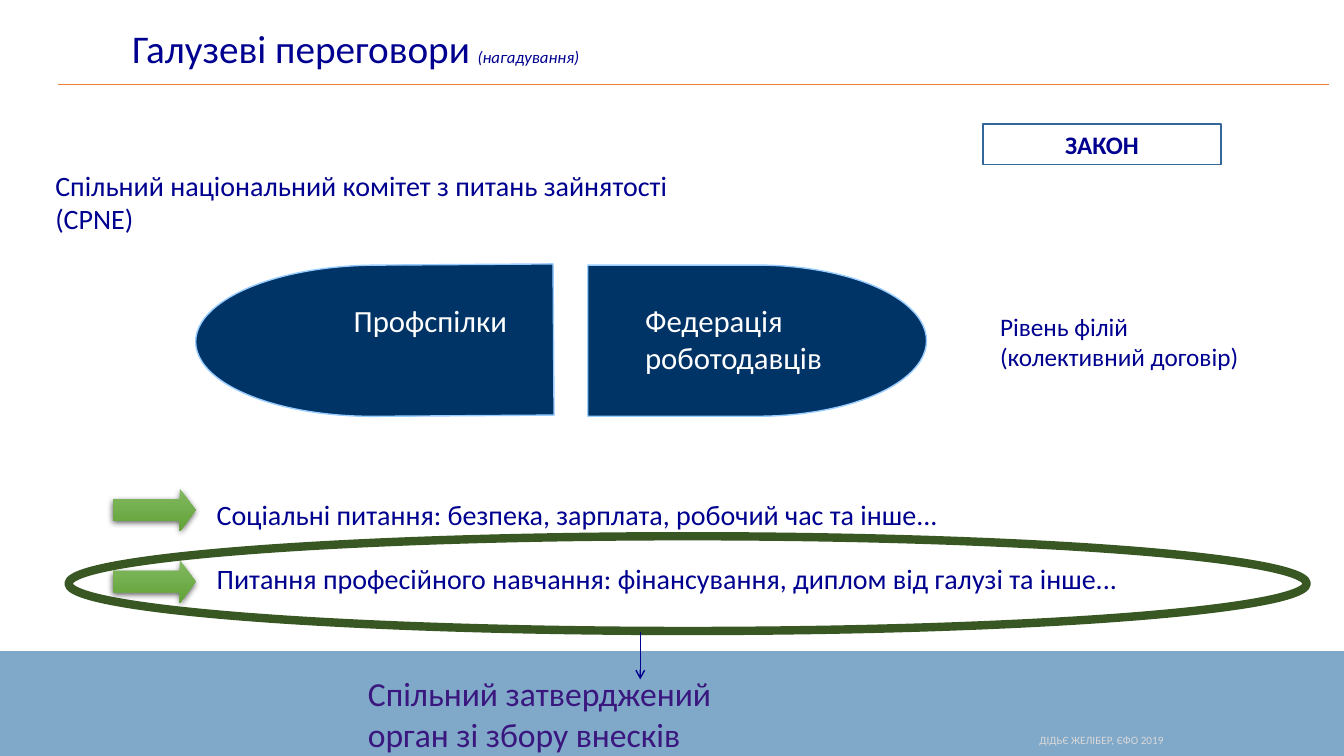
from dataclasses import dataclass
from lxml import etree
from pptx import Presentation
from pptx.dml.color import RGBColor
from pptx.enum.shapes import MSO_CONNECTOR, MSO_SHAPE
from pptx.enum.text import MSO_ANCHOR, PP_ALIGN
from pptx.oxml.ns import qn
from pptx.util import Inches, Pt

RECT, OVAL = MSO_SHAPE.RECTANGLE, MSO_SHAPE.OVAL
ARROW, DELAY = MSO_SHAPE.RIGHT_ARROW, MSO_SHAPE.FLOWCHART_DELAY
LINE = MSO_CONNECTOR.STRAIGHT
TOP, MID = MSO_ANCHOR.TOP, MSO_ANCHOR.MIDDLE
LEFT, CENTER = PP_ALIGN.LEFT, PP_ALIGN.CENTER


@dataclass(frozen=True)
class Theme:
    font: str = "Calibri"
    ink: str = "000090"
    violet: str = "3A177F"
    white: str = "FFFFFF"
    pale: str = "D9D9D9"
    band: str = "80A8C8"
    navy: str = "003366"
    sky: str = "99CCFF"
    steel: str = "336699"
    olive: str = "385723"
    orange: str = "ED7D31"
    leaf: tuple = ("81B861", "62A336")
    title: int = 28
    gap: int = 24
    head: int = 24
    party: int = 22
    body: int = 20
    label: int = 18
    note: int = 12
    foot: int = 8


THEME = Theme()


def rgb(code):
    return RGBColor.from_string(code)


def apply(item, form):
    for key, value in form.items():
        setattr(item, key, value)


def style(run, size, color, **form):
    apply(run.font, {"name": THEME.font, "size": Pt(size), **form})
    run.font.color.rgb = rgb(color)


def frame(shape, **form):
    apply(shape.text_frame, {"word_wrap": True, "vertical_anchor": TOP, **form})
    return shape.text_frame.paragraphs[0]


def write(shape, text, size, color, align=LEFT, wrap=True, anchor=TOP, **form):
    para = frame(shape, word_wrap=wrap, vertical_anchor=anchor)
    para.text = text
    para.alignment = align
    for run in para.runs:
        style(run, size, color, **form)


def label(slide, box, text, size, color, **form):
    shape = slide.shapes.add_textbox(*map(Inches, box))
    write(shape, text, size, color, **form)


def block(slide, kind, box, fill=None, line=None, width=1):
    shape = slide.shapes.add_shape(kind, *map(Inches, box))
    shape.shadow.inherit = False
    if fill:
        shape.fill.solid()
        shape.fill.fore_color.rgb = rgb(fill)
    else:
        shape.fill.background()
    if line:
        shape.line.color.rgb = rgb(line)
        shape.line.width = Pt(width)
    else:
        shape.line.fill.background()
    return shape


def rule(slide, start, end, color, width, head=False):
    line = slide.shapes.add_connector(LINE, *map(Inches, start + end))
    line.line.color.rgb = rgb(color)
    line.line.width = Pt(width)
    props = line._element.spPr
    if head:
        etree.SubElement(props.find(qn("a:ln")), qn("a:tailEnd"), type="arrow")
    etree.SubElement(props, qn("a:effectLst"))


def heading(slide, box):
    x, y, w, h = box
    title = slide.shapes.title
    apply(title, dict(zip(("left", "top", "width", "height"), map(Inches, box))))
    para = frame(title, margin_top=0)
    para.alignment = LEFT
    for text, size, slant in (
        ("Галузеві переговори", THEME.title, False),
        (" ", THEME.gap, False),
        ("(нагадування)", THEME.note, True),
    ):
        run = para.add_run()
        run.text = text
        style(run, size, THEME.ink, italic=slant)
    rule(slide, (x - 0.63, y + 0.6), (x + 11.97, y + 0.6), THEME.orange, 0.5)


def law(slide, box):
    shape = block(slide, RECT, box, THEME.white, THEME.steel)
    write(shape, "ЗАКОН", THEME.label, THEME.ink, align=CENTER, bold=True)


def parties(slide, box):
    x, y, w, h = box
    unions = block(slide, DELAY, (x, y, 3.55, h), THEME.navy, THEME.sky)
    unions.rotation = 179.6
    block(slide, DELAY, (x + w - 3.36, y, 3.36, h), THEME.navy, THEME.sky)
    for shift, width, text in (
        (1.47, 1.86, "Профспілки"),
        (4.36, 2.4, "Федерація\nроботодавців"),
    ):
        place = (x + shift, y + 0.31, width, 0.84)
        label(slide, place, text, THEME.party, THEME.white)


def pointer(slide, box):
    arrow = block(slide, ARROW, box)
    arrow.adjustments[0], arrow.adjustments[1] = 0.5, 0.37
    arrow.fill.gradient()
    arrow.fill.gradient_angle = 270
    for stop, color in zip(arrow.fill.gradient_stops, THEME.leaf):
        stop.color.rgb = rgb(color)
    effects = arrow._element.spPr.find(qn("a:effectLst"))
    shade = etree.SubElement(
        effects, qn("a:outerShdw"), blurRad=str(Pt(4.5)), dist=str(Pt(1.5)),
        dir="5400000", rotWithShape="0",
    )
    color = etree.SubElement(shade, qn("a:srgbClr"), val="000000")
    etree.SubElement(color, qn("a:alpha"), val="63000")


def topics(slide, box):
    x, y, w, h = box
    for row, (drop, text) in enumerate((
        (0.04, "Соціальні питання: безпека, зарплата, робочий час та інше..."),
        (0.67, "Питання професійного навчання: фінансування, диплом від галузі та інше..."),
    )):
        pointer(slide, (x, y + row * 0.71, 0.82, 0.42))
        place = (x + 0.93, y + drop, w - 0.93, 0.44)
        label(slide, place, text, THEME.body, THEME.ink)
    ring = (x - 0.44, y + 0.47, 12.28, h - 0.47)
    block(slide, OVAL, ring, line=THEME.olive, width=6)


def footer(slide, box):
    x, y, w, h = box
    block(slide, RECT, box, THEME.band)
    label(slide, (x + 3.55, y + 0.17, 4.38, 0.87),
          "Спільний затверджений орган зі збору внесків", THEME.head, THEME.violet)
    rule(slide, (x + 6.35, y - 0.19), (x + 6.35, y + 0.28), THEME.ink, 1, True)
    label(slide, (x + 10.21, y + 0.76, 1.48, 0.24), "ДІДЬЄ ЖЕЛІБЕР, ЄФО 2019",
          THEME.foot, THEME.pale, wrap=False, anchor=MID)


def main():
    deck = Presentation()
    deck.slide_width, deck.slide_height = Inches(13.33), Inches(7.5)
    slide = deck.slides.add_slide(deck.slide_layouts[5])
    heading(slide, (1.21, 0.24, 12.05, 0.7))
    law(slide, (9.75, 1.23, 2.36, 0.4))
    label(slide, (0.45, 1.62, 7.07, 0.77),
          "Спільний національний комітет з питань зайнятості (CPNE)",
          THEME.body, THEME.ink)
    parties(slide, (1.94, 2.63, 7.25, 1.5))
    label(slide, (9.82, 3.04, 3.49, 0.71), "Рівень філій\n(колективний договір)",
          THEME.label, THEME.ink)
    topics(slide, (1.12, 4.85, 11.64, 1.41))
    footer(slide, (0, 6.46, 13.33, 1.04))
    deck.save("out.pptx")


if __name__ == "__main__":
    main()
